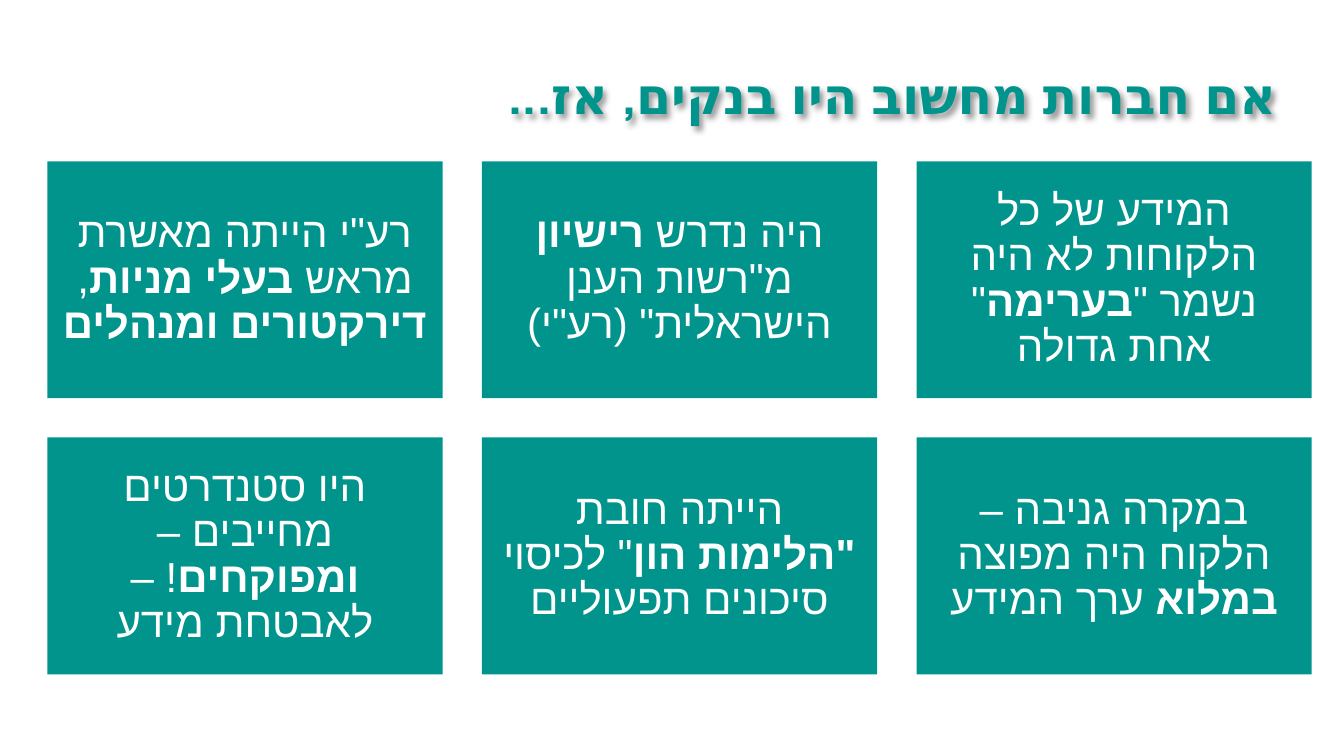
from dataclasses import dataclass

from lxml.etree import SubElement
from pptx import Presentation
from pptx.dml.color import RGBColor
from pptx.enum.shapes import MSO_SHAPE as Shape
from pptx.enum.text import MSO_ANCHOR as Anchor, PP_ALIGN as Align
from pptx.oxml.ns import qn
from pptx.util import Emu, Pt

PX = 9144  # 100 px to the inch
TEAL, WHITE = "00948C", "FFFFFF"


@dataclass(frozen=True)
class Card:
    before: str
    strong: str
    after: str = ""
    strong_end: str = ""


def px(length: int) -> Emu:
    return Emu(length * PX)


def color(value: str) -> RGBColor:
    return RGBColor.from_string(value)


def write_text(shape, runs, *, font, size, fill, align, anchor, inset, line_spacing=1.0):
    """Write (text, bold) runs as one right-to-left paragraph."""
    frame = shape.text_frame
    frame.word_wrap = True
    frame.vertical_anchor = anchor
    frame.margin_left = frame.margin_right = px(inset[0])
    frame.margin_top = frame.margin_bottom = px(inset[1])
    paragraph = frame.paragraphs[0]
    paragraph.alignment = align
    paragraph.line_spacing = line_spacing
    paragraph._p.get_or_add_pPr().set("rtl", "1")
    for text, bold in runs:
        run = paragraph.add_run()
        run.text = text
        run.font.size = Pt(size)
        run.font.bold = bold
        run.font.color.rgb = color(fill)
        run.font.name = font
        properties = run._r.get_or_add_rPr()
        properties.set("lang", "he-IL")
        SubElement(properties, qn("a:cs"), typeface=font)


def add_soft_shadow(shape) -> None:
    effects = SubElement(shape._element.spPr, qn("a:effectLst"))
    shadow = SubElement(effects, qn("a:outerShdw"), blurRad="50800", dist="38100",
                        dir="2700000", algn="tl", rotWithShape="0")
    black = SubElement(shadow, qn("a:srgbClr"), val="000000")
    SubElement(black, qn("a:alpha"), val="40000")


def add_title(slide, text: str) -> None:
    title = slide.shapes.add_textbox(px(0), px(58), px(1276), px(71))
    write_text(title, [(text, True)], font="TeX Gyre Adventor", size=36, fill=TEAL,
               align=Align.RIGHT, anchor=Anchor.BOTTOM, inset=(10, 5))
    add_soft_shadow(title)


def add_card(slide, card: Card, left: int, top: int) -> None:
    box = slide.shapes.add_shape(Shape.RECTANGLE, px(left), px(top),
                                 px(CARD_WIDTH), px(CARD_HEIGHT))
    box.shadow.inherit = False
    box.fill.solid()
    box.fill.fore_color.rgb = color(TEAL)
    box.line.fill.background()
    parts = [(card.before, False), (card.strong, True),
             (card.after, False), (card.strong_end, True)]
    write_text(box, [part for part in parts if part[0]], font="Arial", size=30,
               fill=WHITE, align=Align.CENTER, anchor=Anchor.MIDDLE,
               inset=(12, 12), line_spacing=0.9)


# Card grid, filled from right to left
CARD_WIDTH, CARD_HEIGHT, GAP = 392, 235, 39
RIGHT_COLUMN, TOP_ROW, COLUMNS = 909, 160, 3
CARDS = [
    Card('המידע של כל הלקוחות לא היה נשמר "', "בערימה", '" אחת גדולה'),
    Card("היה נדרש ", "רישיון", ' מ"רשות הענן הישראלית" (רע"י)'),
    Card('רע"י הייתה מאשרת מראש ', "בעלי מניות", ", ", "דירקטורים ומנהלים"),
    Card("במקרה גניבה – הלקוח היה מפוצה ", "במלוא", " ערך המידע"),
    Card("הייתה חובת ", '"הלימות הון', '" לכיסוי סיכונים תפעוליים'),
    Card("היו סטנדרטים מחייבים – ", "ומפוקחים", "! – לאבטחת מידע"),
]


def main() -> None:
    presentation = Presentation()
    presentation.slide_width, presentation.slide_height = px(1333), px(750)
    slide = presentation.slides.add_slide(presentation.slide_layouts[6])

    add_title(slide, "אם חברות מחשוב היו בנקים, אז...")
    for index, card in enumerate(CARDS):
        row, column = divmod(index, COLUMNS)
        add_card(slide, card, RIGHT_COLUMN - column * (CARD_WIDTH + GAP),
                 TOP_ROW + row * (CARD_HEIGHT + GAP))

    presentation.save("out.pptx")


if __name__ == "__main__":
    main()
